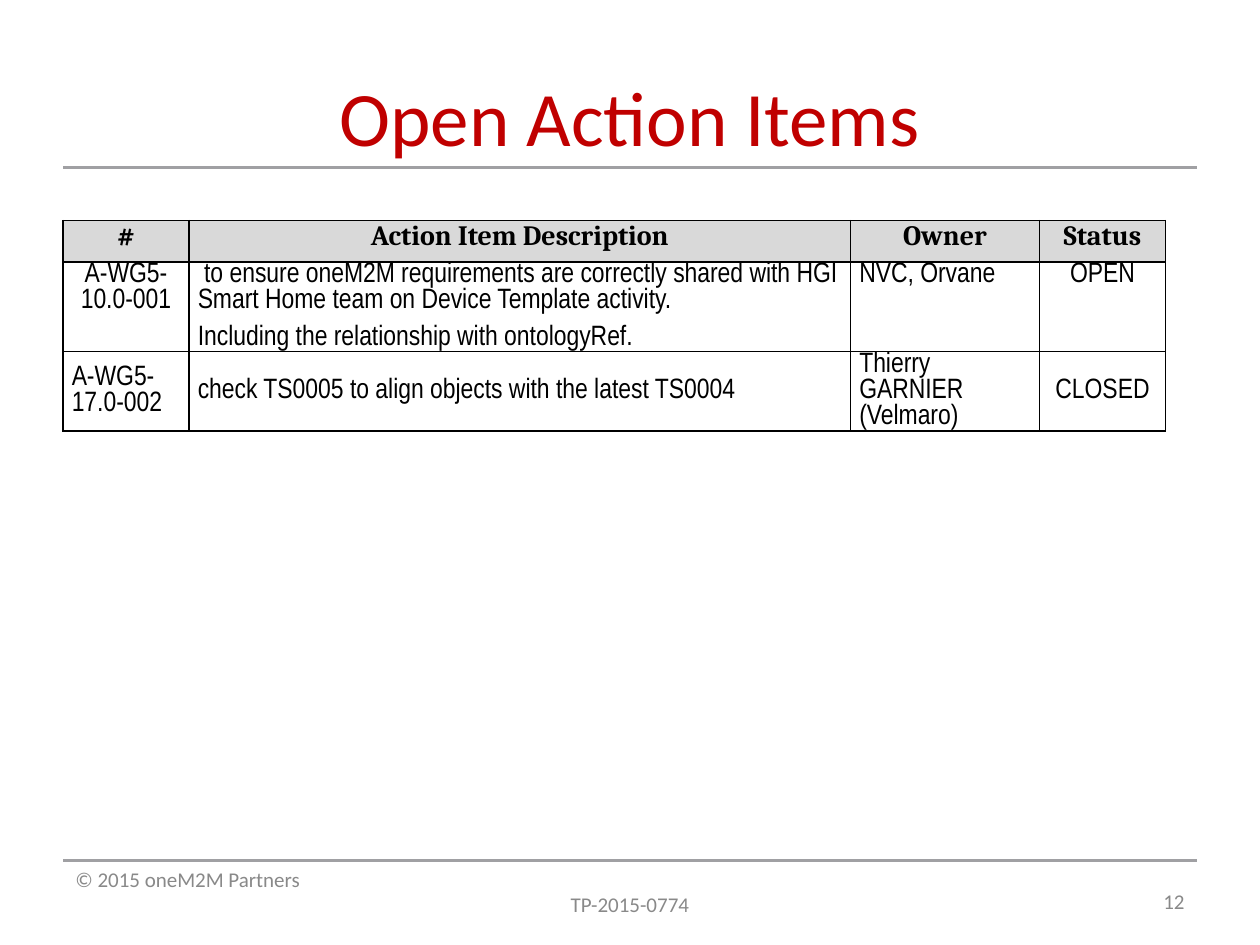
from dataclasses import dataclass
from pptx import Presentation
from pptx.dml.color import RGBColor
from pptx.enum.shapes import MSO_CONNECTOR
from pptx.enum.text import MSO_ANCHOR, MSO_AUTO_SIZE, PP_ALIGN
from pptx.oxml import parse_xml
from pptx.oxml.ns import nsdecls
from pptx.util import Inches, Pt

LEFT, CENTER, RIGHT = PP_ALIGN.LEFT, PP_ALIGN.CENTER, PP_ALIGN.RIGHT
TOP, MIDDLE = MSO_ANCHOR.TOP, MSO_ANCHOR.MIDDLE


@dataclass(frozen=True)
class Theme:
    title: str = "C00000"
    ink: str = "000000"
    muted: str = "898989"
    rule: str = "A0A0A3"
    head: str = "D9D9D9"
    sans: str = "Calibri"
    serif: str = "Cambria"
    narrow: str = "Arial Narrow"
    big: int = 44
    body: int = 16
    small: int = 12


@dataclass(frozen=True)
class Row:
    texts: tuple[str, ...]
    aligns: tuple
    high: float
    anchor: MSO_ANCHOR = TOP
    head: bool = False


THEME = Theme()
EDGE, WIDE = 0.5, 9  # side margin and content width
COLS = (1, 5.25, 1.5, 1)
ROWS = (
    Row(("#", "Action Item Description", "Owner", "Status"),
        (CENTER,) * 4, 0.33, head=True),
    Row(("A-WG5-10.0-001",
         " to ensure oneM2M requirements are correctly shared with HGI "
         "Smart Home team on Device Template activity.\n"
         "Including the relationship with ontologyRef.",
         "NVC, Orvane", "OPEN"),
        (CENTER, LEFT, LEFT, CENTER), 0.71),
    Row(("A-WG5-17.0-002",
         "check TS0005 to align objects with the latest TS0004",
         "Thierry GARNIER (Velmaro)", "CLOSED"),
        (LEFT, LEFT, LEFT, CENTER), 0.63, MIDDLE),
)


def style(para, font: str, size: int, color: str, align, bold=False) -> None:
    para.alignment = align
    para.font.name, para.font.size, para.font.bold = font, Pt(size), bold
    para.font.color.rgb = RGBColor.from_string(color)


def add_rule(slide, top: float) -> None:
    line = slide.shapes.add_connector(
        MSO_CONNECTOR.STRAIGHT, Inches(EDGE), Inches(top),
        Inches(EDGE + WIDE), Inches(top))
    line.line.color.rgb = RGBColor.from_string(THEME.rule)
    line.line.width = Pt(1.75)
    line._element.spPr.append(parse_xml(f"<a:effectLst {nsdecls('a')}/>"))


def add_note(slide, box: tuple, lines: tuple, anchor=TOP) -> None:
    frame = slide.shapes.add_textbox(*map(Inches, box)).text_frame
    frame.word_wrap = True
    frame.auto_size = MSO_AUTO_SIZE.NONE
    frame.vertical_anchor = anchor
    frame.text = "\n".join(text for text, _ in lines)
    for para, (_, align) in zip(frame.paragraphs, lines):
        style(para, THEME.sans, THEME.small, THEME.muted, align)


def add_border(cell) -> None:
    props = cell._tc.get_or_add_tcPr()
    for spot, side in enumerate(("lnL", "lnR", "lnT", "lnB")):
        props.insert(spot, parse_xml(
            f'<a:{side} {nsdecls("a")} w="{Pt(1)}"><a:solidFill>'
            f'<a:srgbClr val="{THEME.ink}"/></a:solidFill></a:{side}>'))


def fill_cell(cell, text: str, align, row: Row) -> None:
    cell.margin_left = cell.margin_right = Inches(0.07)
    cell.margin_top = cell.margin_bottom = 0
    cell.vertical_anchor = row.anchor
    cell.text = text
    for spot, para in enumerate(cell.text_frame.paragraphs):
        para.space_before = Pt(6 if spot else 0)
        if row.head:
            para.space_after = Pt(3)
        style(para, THEME.serif if row.head else THEME.narrow,
              THEME.body, THEME.ink, align, row.head)
    if row.head:
        cell.fill.solid()
        cell.fill.fore_color.rgb = RGBColor.from_string(THEME.head)
    else:
        cell.fill.background()
    add_border(cell)


def add_grid(slide) -> None:
    table = slide.shapes.add_table(
        len(ROWS), len(COLS), Inches(EDGE), Inches(1.75),
        Inches(sum(COLS)), Inches(sum(row.high for row in ROWS))).table
    table.first_row = table.horz_banding = False
    for col, wide in zip(table.columns, COLS):
        col.width = Inches(wide)
    for line, row in zip(table.rows, ROWS):
        line.height = Inches(row.high)
        for cell, text, align in zip(line.cells, row.texts, row.aligns):
            fill_cell(cell, text, align, row)


def main() -> None:
    deck = Presentation()
    deck.slide_width, deck.slide_height = Inches(10), Inches(7.5)
    slide = deck.slides.add_slide(deck.slide_layouts[5])

    # Rules and footer
    for top in (6.83, 1.33):
        add_rule(slide, top)
    add_note(slide, (EDGE, 6.83, WIDE, 0.51),
             (("© 2015 oneM2M Partners", LEFT), ("TP-2015-0774", CENTER)))
    add_note(slide, (7.17, 6.95, 2.33, 0.4), (("12", RIGHT),), MIDDLE)

    # Title
    title = slide.shapes.title
    title.left, title.top, title.width, title.height = map(
        Inches, (EDGE, 0.5, WIDE, 1.25))
    frame = title.text_frame
    frame.text = "Open Action Items"
    frame.vertical_anchor = TOP
    frame.auto_size = MSO_AUTO_SIZE.NONE
    style(frame.paragraphs[0], THEME.sans, THEME.big, THEME.title, CENTER)

    # Action items
    add_grid(slide)
    deck.save("out.pptx")


if __name__ == "__main__":
    main()
